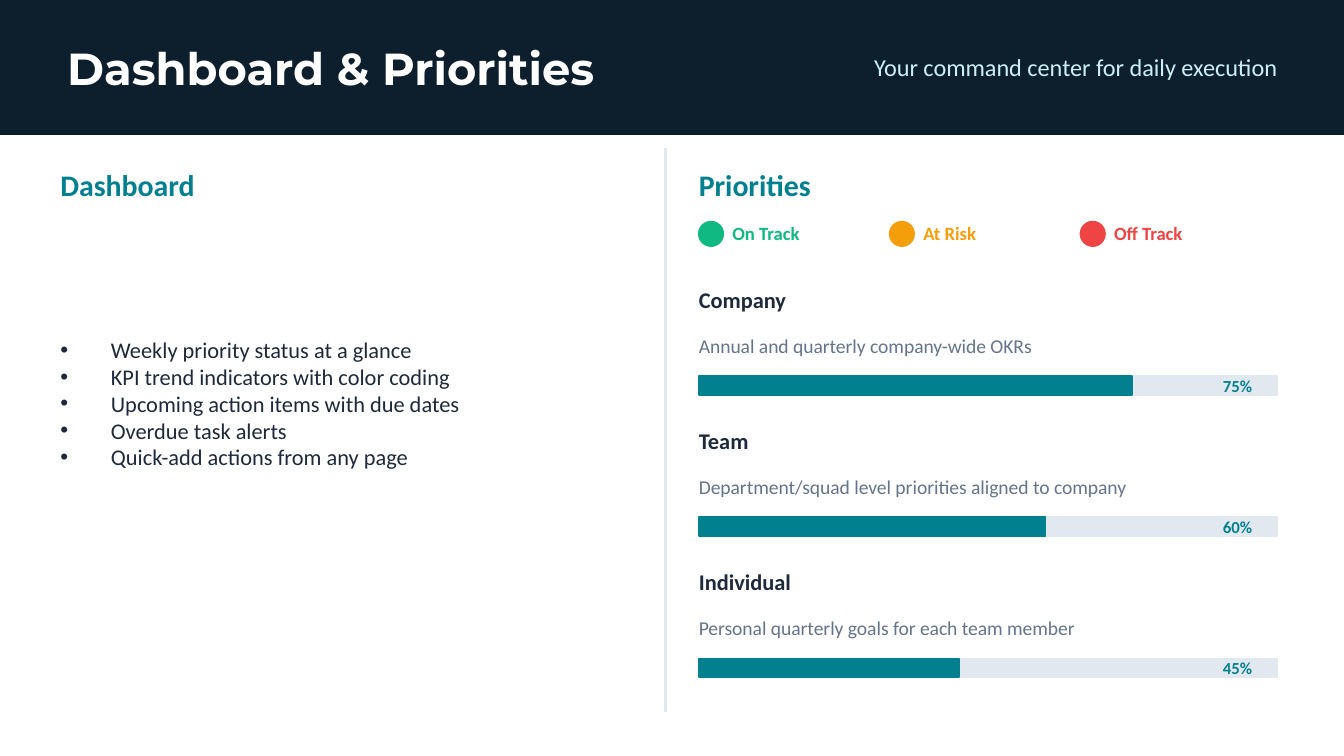
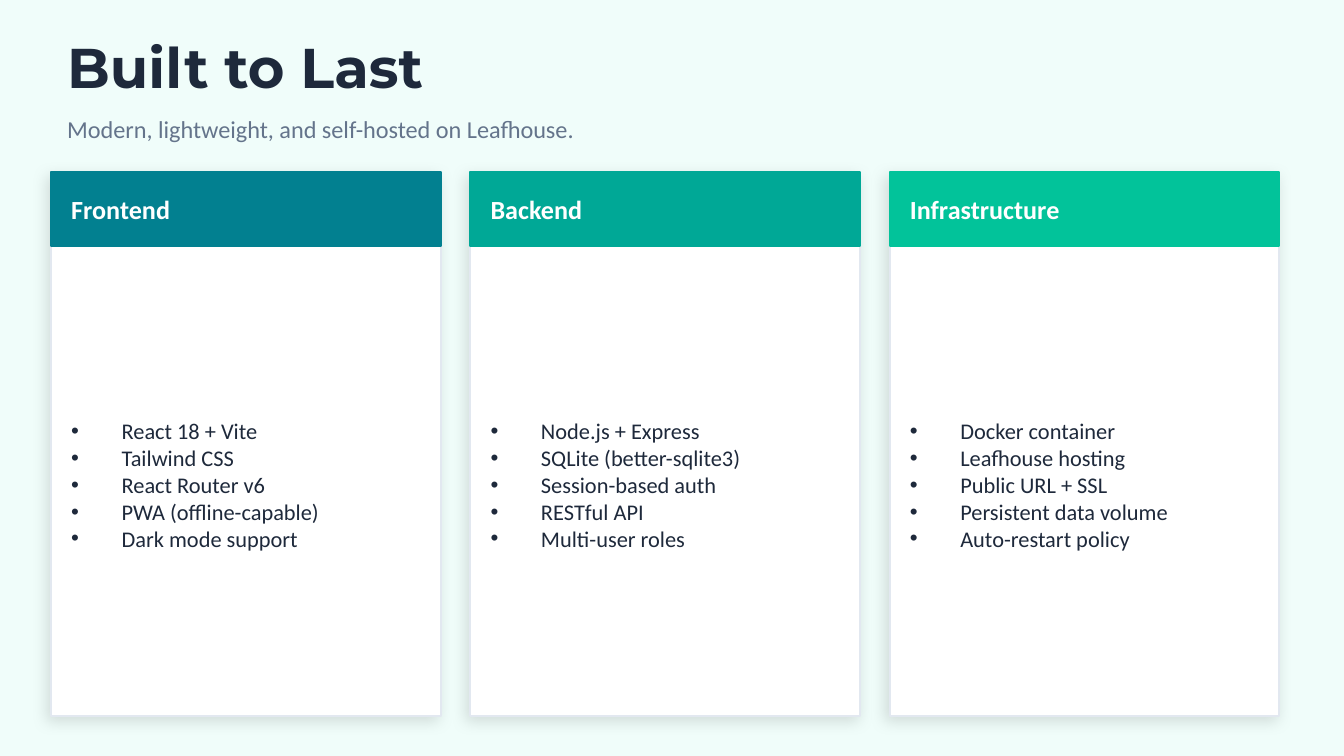
from collections.abc import Sequence
from dataclasses import dataclass
from typing import NamedTuple

from lxml.etree import SubElement
from pptx import Presentation
from pptx.dml.color import RGBColor
from pptx.enum.shapes import MSO_CONNECTOR, MSO_SHAPE
from pptx.enum.text import MSO_ANCHOR, MSO_AUTO_SIZE, PP_ALIGN
from pptx.oxml.ns import qn
from pptx.shapes.autoshape import Shape
from pptx.slide import Slide
from pptx.util import Pt

COLORS = {
    "navy": "0D1F2D",
    "ink": "1E293B",
    "slate": "64748B",
    "rule": "E2E8F0",
    "white": "FFFFFF",
    "mint": "F0FDFA",
    "ice": "CCEFF3",
    "teal": "028090",
    "sea": "00A896",
    "green": "02C39A",
    "on_track": "10B981",
    "at_risk": "F59E0B",
    "off_track": "EF4444",
}
HEADING_FONT, BODY_FONT = "Montserrat", "Calibri"
SLIDE_WIDTH, SLIDE_HEIGHT = 720, 405
MARGIN = 36
TEXT_WIDTH = SLIDE_WIDTH - 2 * MARGIN
HANGING_INDENT = 27


class Box(NamedTuple):
    """Left, top, width and height in points."""
    left: float
    top: float
    width: float
    height: float

    def lengths(self) -> list[Pt]:
        return [Pt(value) for value in self]


@dataclass(frozen=True)
class Status:
    label: str
    color: str


@dataclass(frozen=True)
class Priority:
    level: str
    summary: str
    progress: float


@dataclass(frozen=True)
class Layer:
    name: str
    color: str
    features: tuple[str, ...]


FEATURES = (
    "Weekly priority status at a glance",
    "KPI trend indicators with color coding",
    "Upcoming action items with due dates",
    "Overdue task alerts",
    "Quick-add actions from any page",
)
STATUSES = (
    Status("On Track", "on_track"),
    Status("At Risk", "at_risk"),
    Status("Off Track", "off_track"),
)
PRIORITIES = (
    Priority("Company", "Annual and quarterly company-wide OKRs", 0.75),
    Priority("Team", "Department/squad level priorities aligned to company", 0.60),
    Priority("Individual", "Personal quarterly goals for each team member", 0.45),
)
LAYERS = (
    Layer("Frontend", "teal", (
        "React 18 + Vite", "Tailwind CSS", "React Router v6",
        "PWA (offline-capable)", "Dark mode support")),
    Layer("Backend", "sea", (
        "Node.js + Express", "SQLite (better-sqlite3)", "Session-based auth",
        "RESTful API", "Multi-user roles")),
    Layer("Infrastructure", "green", (
        "Docker container", "Leafhouse hosting", "Public URL + SSL",
        "Persistent data volume", "Auto-restart policy")),
)


def rgb(color: str) -> RGBColor:
    return RGBColor.from_string(COLORS[color])


def write(holder: Shape, lines: Sequence[str], *, size: float, color: str,
          bold: bool = False, font: str = BODY_FONT,
          align: PP_ALIGN = PP_ALIGN.LEFT, bullets: bool = False) -> None:
    """Fill a text holder with one paragraph per line, centred vertically."""
    frame = holder.text_frame
    frame.word_wrap = True
    frame.auto_size = MSO_AUTO_SIZE.NONE
    frame.vertical_anchor = MSO_ANCHOR.MIDDLE
    frame.margin_left = frame.margin_top = 0
    frame.margin_right = frame.margin_bottom = 0
    for index, line in enumerate(lines):
        paragraph = frame.add_paragraph() if index else frame.paragraphs[0]
        properties = paragraph._p.get_or_add_pPr()
        indent = HANGING_INDENT if bullets else 0
        properties.set("marL", str(Pt(indent)))
        properties.set("indent", str(-Pt(indent)))
        if bullets:
            SubElement(properties, qn("a:buFont")).set("typeface", "Arial")
            SubElement(properties, qn("a:buChar")).set("char", "•")
        else:
            SubElement(properties, qn("a:buNone"))
        paragraph.alignment = align
        paragraph.space_before = Pt(0)
        run = paragraph.add_run()
        run.text = line
        run.font.name, run.font.size, run.font.bold = font, Pt(size), bold
        run.font.color.rgb = rgb(color)


def add_label(slide: Slide, box: Box, text: str, *, size: float, color: str,
              bold: bool = False, align: PP_ALIGN = PP_ALIGN.LEFT) -> None:
    label = slide.shapes.add_textbox(*box.lengths())
    write(label, [text], size=size, color=color, bold=bold, align=align)


def place(holder: Shape, box: Box) -> Shape:
    """Move a placeholder into its box and in front of what is drawn so far."""
    holder.left, holder.top, holder.width, holder.height = box.lengths()
    tree = holder.element.getparent()
    tree.append(holder.element)
    return holder


def set_title(slide: Slide, box: Box, text: str, *, size: float, color: str) -> None:
    write(place(slide.shapes.title, box), [text], size=size, color=color,
          bold=True, font=HEADING_FONT)


def set_list(holder: Shape, box: Box, items: Sequence[str]) -> None:
    write(place(holder, box), items, size=12, color="ink", bullets=True)


def add_panel(slide: Slide, box: Box, fill: str, *, outline: str | None = None,
              kind: MSO_SHAPE = MSO_SHAPE.RECTANGLE) -> Shape:
    panel = slide.shapes.add_shape(kind, *box.lengths())
    panel.shadow.inherit = False
    panel.fill.solid()
    panel.fill.fore_color.rgb = rgb(fill)
    panel.line.color.rgb = rgb(outline or fill)
    panel.line.width = Pt(1)
    return panel


def add_soft_shadow(panel: Shape) -> None:
    effects = panel.element.spPr.find(qn("a:effectLst"))
    shadow = SubElement(effects, qn("a:outerShdw"), blurRad=str(Pt(8)),
                        dist=str(Pt(3)), dir=str(135 * 60000),
                        algn="bl", rotWithShape="0")
    tone = SubElement(shadow, qn("a:srgbClr"), val="000000")
    SubElement(tone, qn("a:alpha"), val="12000")


def add_divider(slide: Slide, x: float, top: float, bottom: float) -> None:
    divider = slide.shapes.add_connector(
        MSO_CONNECTOR.STRAIGHT, Pt(x), Pt(top), Pt(x), Pt(bottom))
    divider.line.color.rgb = rgb("rule")
    divider.line.width = Pt(1.5)
    SubElement(divider._element.spPr, qn("a:effectLst"))


def set_background(slide: Slide, color: str) -> None:
    slide.background.fill.solid()
    slide.background.fill.fore_color.rgb = rgb(color)


def add_status(slide: Slide, left: float, status: Status) -> None:
    add_panel(slide, Box(left, 118.8, 13, 13), status.color, kind=MSO_SHAPE.OVAL)
    add_label(slide, Box(left + 18, 116.64, 79.2, 15.84), status.label,
              size=10, color=status.color, bold=True)


def add_priority(slide: Slide, left: float, top: float, width: float,
                 priority: Priority) -> None:
    add_label(slide, Box(left, top, 100.8, 21.6), priority.level,
              size=12, color="ink", bold=True)
    add_label(slide, Box(left, top + 21.6, width, 27.36), priority.summary,
              size=10.5, color="slate")
    track = Box(left, top + 51.84, width, 10)
    add_panel(slide, track, "rule")
    add_panel(slide, track._replace(width=width * priority.progress), "teal")
    add_label(slide, Box(left + width - 28.8, top + 48.96, 28.8, 15.84),
              f"{priority.progress:.0%}", size=9, color="teal", bold=True)


def build_dashboard(slide: Slide) -> None:
    set_background(slide, "white")
    band = Box(0, 0, SLIDE_WIDTH, 72)
    add_panel(slide, band, "navy")
    band_text = band._replace(left=MARGIN, width=TEXT_WIDTH)
    set_title(slide, band_text, "Dashboard & Priorities", size=24, color="white")
    add_label(slide, band_text, "Your command center for daily execution",
              size=13, color="ice", align=PP_ALIGN.RIGHT)

    left, right, width = 32.4, 374.4, 309.6
    for x, heading in ((left, "Dashboard"), (right, "Priorities")):
        add_label(slide, Box(x, 85, width, 27.36), heading,
                  size=16, color="teal", bold=True)
    set_list(slide.placeholders[1], Box(left, 118.8, 302.4, 194.4), FEATURES)
    add_divider(slide, 356.4, 79.2, 381.6)
    for index, status in enumerate(STATUSES):
        add_status(slide, right + 102.24 * index, status)
    for index, priority in enumerate(PRIORITIES):
        add_priority(slide, right, 149.76 + 75.6 * index, width, priority)


def add_layer(slide: Slide, card: Box, layer: Layer, holder: Shape) -> None:
    """Draw a card with a coloured header and its feature list."""
    add_soft_shadow(add_panel(slide, card, "white", outline="rule"))
    header = card._replace(height=39.6)
    add_panel(slide, header, layer.color)
    inset = 10.8
    add_label(slide, header._replace(left=card.left + inset, width=187.2),
              layer.name, size=14, color="white", bold=True)
    set_list(holder, Box(card.left + inset, card.top + 50.4, 190.8, 234),
             layer.features)


def build_stack(slide: Slide) -> None:
    set_background(slide, "mint")
    set_title(slide, Box(MARGIN, 15.84, TEXT_WIDTH, 39.6), "Built to Last",
              size=30, color="ink")
    subtitle, *lists = [holder for holder in slide.placeholders
                        if holder.placeholder_format.idx > 0]
    write(place(subtitle, Box(MARGIN, 57.6, TEXT_WIDTH, 23.04)),
          ["Modern, lightweight, and self-hosted on Leafhouse."],
          size=13, color="slate")
    first_card, pitch = Box(27.36, 92.16, 208.8, 291.6), 224.64
    for index, (layer, holder) in enumerate(zip(LAYERS, lists)):
        card = first_card._replace(left=first_card.left + pitch * index)
        add_layer(slide, card, layer, holder)


def main() -> None:
    deck = Presentation()
    deck.slide_width, deck.slide_height = Pt(SLIDE_WIDTH), Pt(SLIDE_HEIGHT)
    layouts = deck.slide_layouts
    build_dashboard(deck.slides.add_slide(layouts.get_by_name("Title and Content")))
    build_stack(deck.slides.add_slide(layouts.get_by_name("Comparison")))
    deck.save("out.pptx")


if __name__ == "__main__":
    main()
